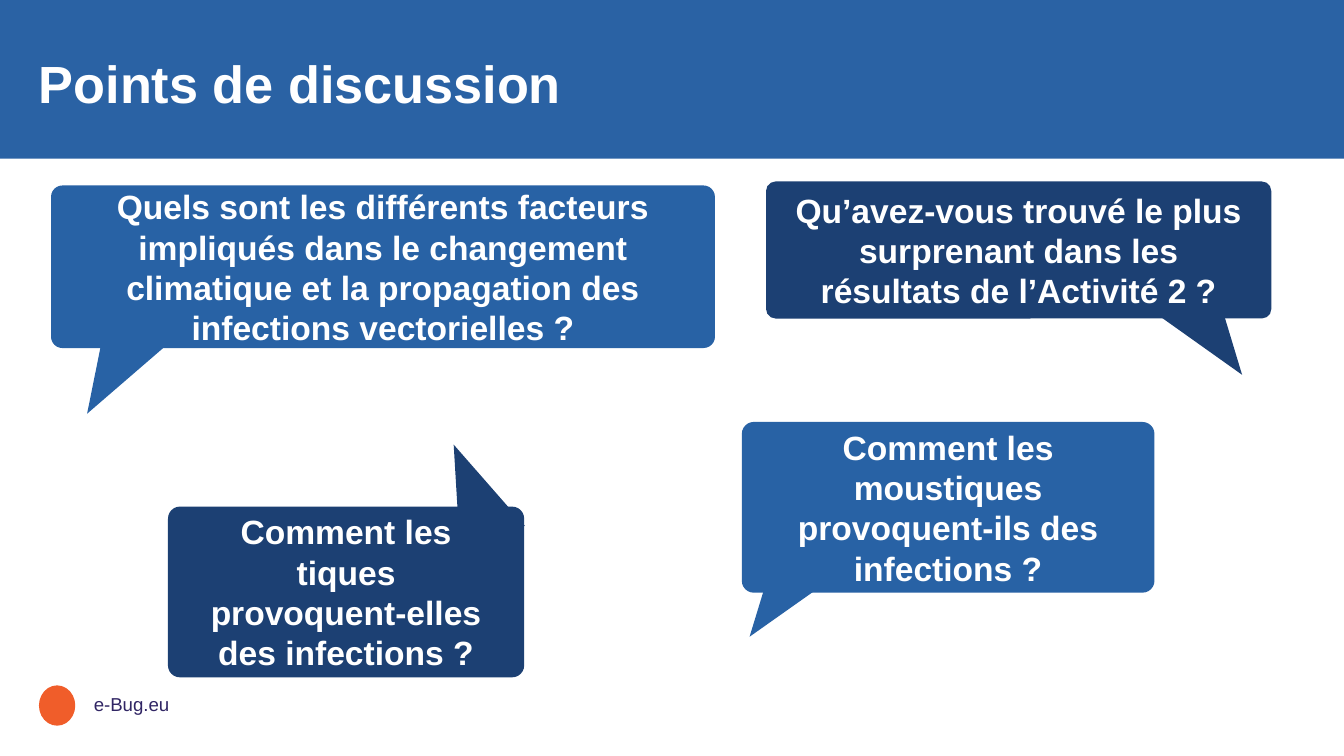
from pptx import Presentation
from pptx.dml.color import RGBColor
from pptx.enum.shapes import MSO_SHAPE
from pptx.enum.text import MSO_ANCHOR, PP_ALIGN
from pptx.util import Inches, Pt

BLUE, NAVY, WHITE = "2862A5", "1C4073", "FFFFFF"


def add_block(preset, left, top, width, height, color):
    block = slide.shapes.add_shape(
        preset, Inches(left), Inches(top), Inches(width), Inches(height))
    block.shadow.inherit = False
    block.fill.solid()
    block.fill.fore_color.rgb = RGBColor.from_string(color)
    block.line.fill.background()
    return block


def write(frame, text, size, color, bold):
    paragraph = frame.paragraphs[0]
    paragraph.text = text
    paragraph.font.name = "Arial"
    paragraph.font.size = Pt(size)
    paragraph.font.bold = bold
    paragraph.font.color.rgb = RGBColor.from_string(color)
    return paragraph


presentation = Presentation()
presentation.slide_width = Inches(10)
presentation.slide_height = Inches(10) * 9 // 16
slide = presentation.slides.add_slide(presentation.slide_layouts[6])

add_block(MSO_SHAPE.RECTANGLE, 0, 0, 10, 1.18, "2A62A4")
add_block(MSO_SHAPE.OVAL, 0.29, 5.1, 0.27, 0.3, "F05D2A")

site = slide.shapes.add_textbox(Inches(0.6), Inches(5.11), Inches(0.76), Inches(0.3))
site.text_frame.word_wrap = False
write(site.text_frame, "e-Bug.eu", 10, "302564", False)

title = slide.shapes.add_textbox(Inches(0.29), Inches(0.29), Inches(9.37), Inches(0.71))
title.text_frame.word_wrap = True
title.text_frame.margin_left = 0
title.text_frame.vertical_anchor = MSO_ANCHOR.MIDDLE
heading = write(title.text_frame, "Points de discussion", 28, WHITE, True)
heading.line_spacing = 0.9

questions = [
    ("Quels sont les différents facteurs impliqués dans le changement climatique "
     "et la propagation des infections vectorielles ?",
     (0.38, 1.38, 4.94, 1.21), (0.58, 2.37), 210.3, BLUE),
    ("Comment les tiques provoquent-elles des infections ?",
     (1.25, 3.77, 2.65, 1.27), (3.26, 3.28), 337.7, NAVY),
    ("Qu’avez-vous trouvé le plus surprenant dans les résultats de l’Activité 2 ?",
     (5.7, 1.35, 3.76, 1.02), (8.76, 2.1), 144.3, NAVY),
    ("Comment les moustiques provoquent-ils des infections ?",
     (5.52, 3.14, 3.07, 1.27), (5.54, 4.05), 215.9, BLUE),
]
for question, bubble_box, tail_corner, tail_angle, color in questions:
    tail = add_block(MSO_SHAPE.ISOSCELES_TRIANGLE, *tail_corner, 0.52, 0.76, color)
    tail.rotation = tail_angle

    bubble = add_block(MSO_SHAPE.ROUNDED_RECTANGLE, *bubble_box, color)
    bubble.adjustments[0] = 0.07
    frame = bubble.text_frame
    frame.word_wrap = True
    frame.vertical_anchor = MSO_ANCHOR.MIDDLE
    frame.margin_left = frame.margin_right = Inches(0.19)
    frame.margin_top = frame.margin_bottom = Inches(0.2)
    write(frame, question, 18, WHITE, True).alignment = PP_ALIGN.CENTER

presentation.save("out.pptx")
